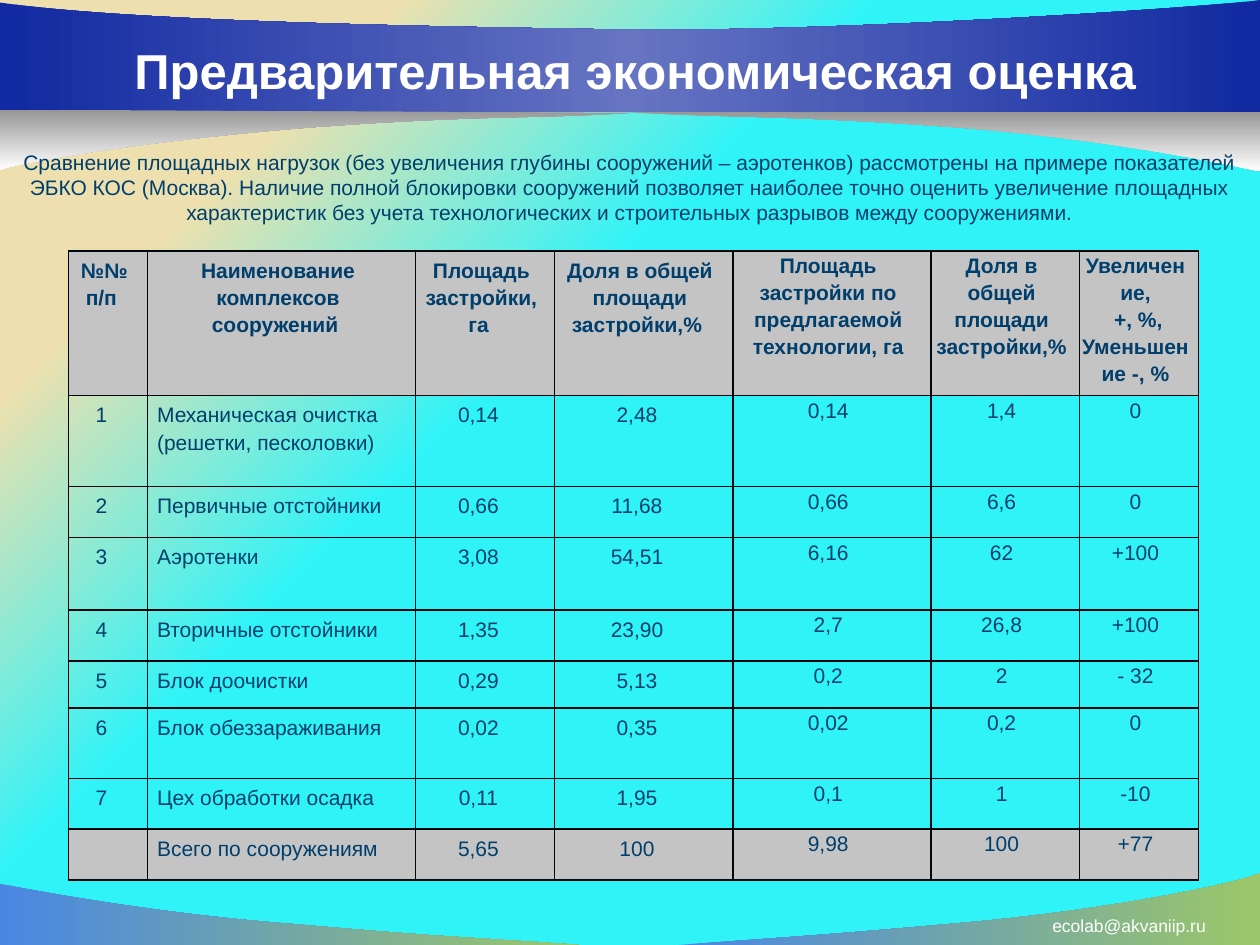
from lxml import etree
from pptx import Presentation
from pptx import util as u
from pptx.dml.color import RGBColor
from pptx.enum import text
from pptx.oxml import parse_xml
from pptx.oxml.ns import nsdecls, qn

Pt = u.Pt
NAVY, WHITE, GREY, BORDER = "003E6C", "FFFFFF", "C4C4C4", "00070C"
BLUE_GREEN = [(0, "4987E3"), (100, "9CC769")]
GREY_FADE = [(0, "969696"), (100, "FFFFFF")]
BLUE_BAND = [(0, "1129A1"), (50, "6674C2"), (100, "1129A1")]
CENTER, LEFT, RIGHT = text.PP_ALIGN.CENTER, text.PP_ALIGN.LEFT, text.PP_ALIGN.RIGHT

COLUMNS = [45.4, 153.2, 79.2, 102, 113.2, 85, 68]
ROWS = [69, 52, 29, 41.6, 29, 26.8, 40.4, 29, 29]
PADDED_COLUMNS = 4  # the first columns have cell margins, the others none
CELLS = [
    ["№№ п/п ", "Наименование комплексов сооружений ", "Площадь застройки, га ",
     "Доля в общей площади застройки,% ", "Площадь застройки по предлагаемой технологии, га",
     "Доля в общей площади застройки,%", "Увеличение,\n +, %,\nУменьшение -, %"],
    ["1 ", "Механическая очистка (решетки, песколовки)", "0,14 ", "2,48 ", "0,14", "1,4", "0"],
    ["2 ", "Первичные отстойники", "0,66 ", "11,68 ", "0,66", "6,6", "0"],
    ["3 ", "Аэротенки", "3,08 ", "54,51 ", "6,16", "62", "+100"],
    ["4 ", "Вторичные отстойники", "1,35 ", "23,90 ", "2,7", "26,8", "+100"],
    ["5 ", "Блок доочистки", "0,29 ", "5,13 ", "0,2", "2", "- 32"],
    ["6 ", "Блок обеззараживания", "0,02 ", "0,35 ", "0,02", "0,2", "0"],
    ["7 ", "Цех обработки осадка", "0,11 ", "1,95 ", "0,1", "1", "-10"],
    ["", "Всего по сооружениям", "5,65 ", "100 ", "9,98", "100", "+77"],
]


def color(value):
    return RGBColor.from_string(value)


def gradient(stops, direction):
    """Return a gradient fill element; direction is its a:lin or a:path part."""
    marks = "".join(f'<a:gs pos="{place * 1000}"><a:srgbClr val="{value}"/></a:gs>'
                    for place, value in stops)
    return parse_xml(f'<a:gradFill {nsdecls("a")} rotWithShape="1">'
                     f'<a:gsLst>{marks}</a:gsLst>{direction}</a:gradFill>')


def style(frame, size, value, align, bold=False):
    for para in frame.paragraphs:
        para.alignment = align
        for span in para.runs:
            span.font.name, span.font.size, span.font.bold = "Arial", Pt(size), bold
            span.font.color.rgb = color(value)


def bend_lines(shape, count):
    """Turn the first lines of a freeform, three at a time, into cubic curves."""
    lines = list(shape.element.iter(qn("a:lnTo")))
    for first in range(0, 3 * count, 3):
        curve = etree.Element(qn("a:cubicBezTo"))
        lines[first].addprevious(curve)
        for line in lines[first:first + 3]:
            curve.append(line[0])
            line.getparent().remove(line)


def add_sweep(page, box, start, curves, corners, stops, angle):
    left, top = box[:2]
    knots = [start, *(knot for curve in curves for knot in curve), *corners]
    points = [(Pt(left + x), Pt(top + y)) for x, y in knots]
    builder = page.shapes.build_freeform(*points[0])
    builder.add_line_segments(points[1:], close=True)
    shape = builder.convert_to_shape()
    bend_lines(shape, len(curves))
    shape.shadow.inherit = False
    shape.line.fill.background()
    shape.fill.background()
    old = shape.element.spPr.find(qn("a:noFill"))
    old.getparent().replace(old, gradient(stops, f'<a:lin ang="{angle * 60000}" scaled="0"/>'))


def add_background(page):
    page.background.fill.solid()
    old = page.background.fill._xPr.find(qn("a:solidFill"))
    focus = '<a:path path="circle"><a:fillToRect l="100000" t="100000"/></a:path>'
    old.getparent().replace(old, gradient([(60, "30F3F8"), (82, "EEE0AE")], focus))


def add_bottom_sweeps(page, box):
    add_sweep(page, box, (331, 41),
              [[(276, 37), (258, 37), (167, 29)], [(76, 22), (1, 6), (0, 6)]],
              [(0, 41)], BLUE_GREEN, 0)
    add_sweep(page, box, (388, 41),
              [[(442, 37), (465, 36), (554, 28)], [(642, 20), (713, 4), (720, 0)]],
              [(720, 41)], BLUE_GREEN, 0)


def add_top_sweeps(page, box):
    add_sweep(page, box, (360, 64.1),
              [[(420, 67.7), (446, 65.5), (546, 72.7)], [(647, 80.6), (719, 97.9), (720, 97.9)]],
              [(720, 63.4)], GREY_FADE, 90)
    add_sweep(page, box, (720, 0),
              [[(694, 4), (470, 19), (351, 16.8)], [(231, 15), (73, 12), (0, 1.5)]],
              [(0, 64), (720, 64)], BLUE_BAND, 0)
    add_sweep(page, box, (360, 64.6),
              [[(300, 68.2), (279, 65.5), (179, 72.7)], [(79, 80.6), (8, 93.6), (0, 97.2)]],
              [(0, 62.6)], GREY_FADE, 90)


def place_title(page, box, words):
    title = page.shapes.title
    title.left, title.top, title.width, title.height = map(Pt, box)
    title.text_frame.text = words
    title.text_frame.vertical_anchor = text.MSO_ANCHOR.MIDDLE
    style(title.text_frame, 28, WHITE, CENTER, bold=True)
    title.element.getparent().append(title.element)  # above the sweeps


def add_text(page, box, words, size, value, align, anchor=text.MSO_ANCHOR.TOP):
    frame = page.shapes.add_textbox(*map(Pt, box)).text_frame
    frame.word_wrap = True
    frame.vertical_anchor = anchor
    frame.text = words
    style(frame, size, value, align)


def add_borders(cell):
    properties = cell._tc.get_or_add_tcPr()
    for index, side in enumerate(("lnL", "lnR", "lnT", "lnB")):
        line = etree.Element(qn(f"a:{side}"), w=str(Pt(1)))
        fill = etree.SubElement(line, qn("a:solidFill"))
        etree.SubElement(fill, qn("a:srgbClr"), val=BORDER)
        properties.insert(index, line)


def format_cell(cell, words, row, column):
    cell.text = words
    if column < PADDED_COLUMNS:
        cell.margin_left = cell.margin_right = Pt(5.4)
        cell.margin_top = cell.margin_bottom = Pt(2.7)
    else:
        cell.margin_left = cell.margin_right = cell.margin_top = cell.margin_bottom = 0
    align = LEFT if column == 1 and row > 0 else CENTER
    style(cell.text_frame, 12, NAVY, align, bold=row == 0)
    for para in cell.text_frame.paragraphs:
        para.line_spacing = 1.15
        if align == CENTER:
            para._p.get_or_add_pPr().set("marR", str(Pt(4.2)))  # right indent
    if row in (0, len(ROWS) - 1):
        cell.fill.solid()
        cell.fill.fore_color.rgb = color(GREY)
    else:
        cell.fill.background()
    add_borders(cell)


def add_area_table(page, box):
    table = page.shapes.add_table(len(ROWS), len(COLUMNS), *map(Pt, box)).table
    table.first_row = table.horz_banding = False
    for column, width in zip(table.columns, COLUMNS):
        column.width = Pt(width)
    for row, height in zip(table.rows, ROWS):
        row.height = Pt(height)
    for r, values in enumerate(CELLS):
        for c, words in enumerate(values):
            format_cell(table.cell(r, c), words, r, c)


def main():
    deck = Presentation()
    deck.slide_width, deck.slide_height = Pt(720), Pt(540)
    page = deck.slides.add_slide(deck.slide_layouts[5])

    # Backdrop
    add_background(page)
    add_bottom_sweeps(page, (0, 499, 720, 41))
    add_top_sweeps(page, (0, 0, 720, 98))

    # Texts
    add_text(page, (546, 519.3, 150, 18), "ecolab@akvaniip.ru", 10, WHITE, RIGHT)
    place_title(page, (54, 17.8, 618, 44.6), "Предварительная экономическая оценка")
    add_text(page, (0, 81.5, 720, 51),
             "Сравнение площадных нагрузок (без увеличения глубины сооружений – аэротенков) "
             "рассмотрены на примере показателей ЭБКО КОС (Москва). Наличие полной блокировки "
             "сооружений позволяет наиболее точно оценить увеличение площадных характеристик "
             "без учета технологических и строительных разрывов между сооружениями.",
             12, NAVY, CENTER, text.MSO_ANCHOR.MIDDLE)

    # Table of built-up areas
    add_area_table(page, (39, 143.3, sum(COLUMNS), sum(ROWS)))
    deck.save("out.pptx")


if __name__ == "__main__":
    main()
